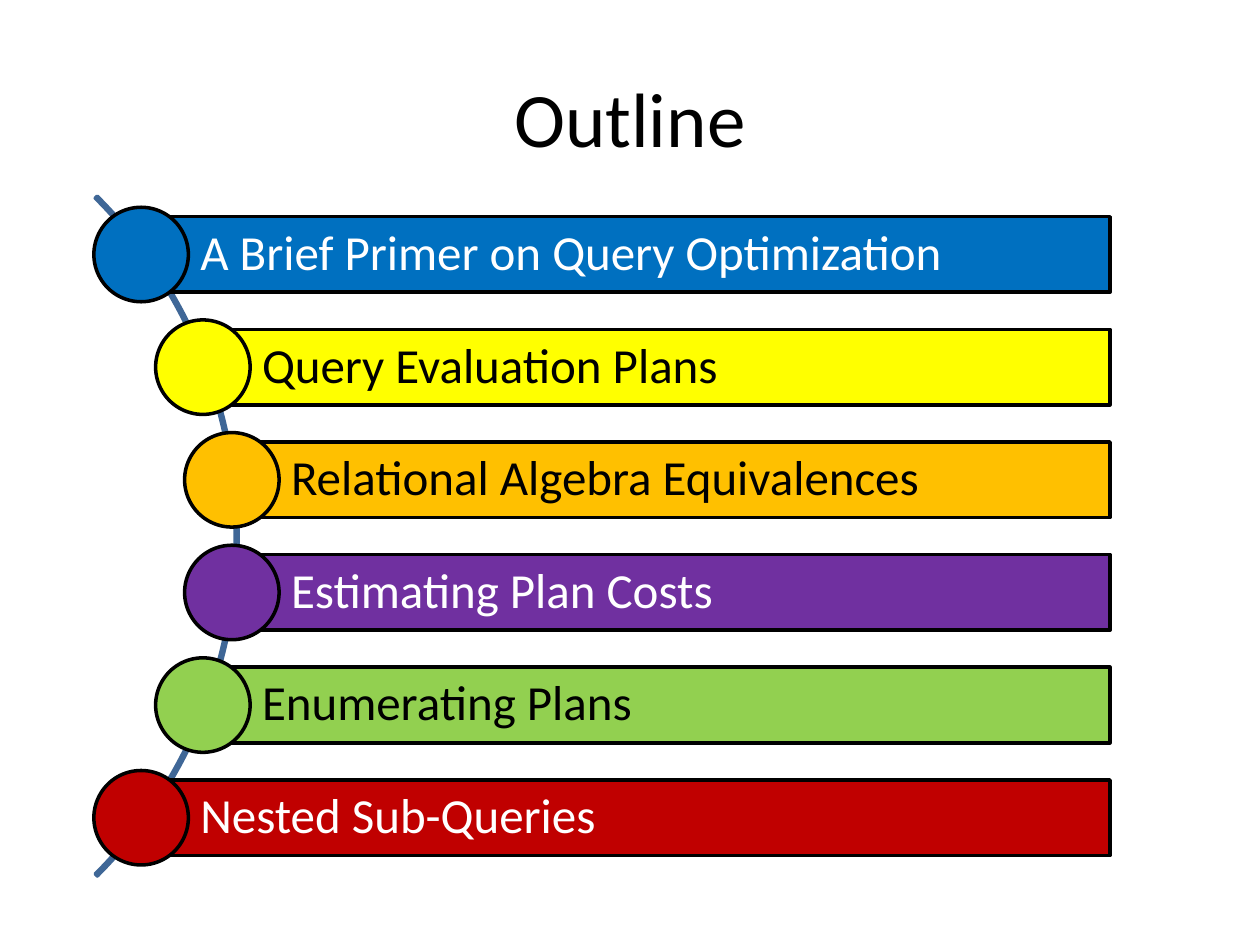
from dataclasses import dataclass

from pptx import Presentation
from pptx.dml.color import RGBColor
from pptx.enum.shapes import MSO_SHAPE
from pptx.enum.text import MSO_ANCHOR, PP_ALIGN
from pptx.util import Inches, Pt

FONT = "Calibri"
BLACK, WHITE = "000000", "FFFFFF"
FIRST_TOP, LAST_TOP = 1.72, 6.19
BAR_HEIGHT, BAR_RIGHT = 0.6, 8.81
DOT_SIZE = 0.75
ARC_SIZE, ARC_LEFT, ARC_TOP = 7.63, -5.74, 0.44


@dataclass(frozen=True)
class Topic:
    label: str
    fill: str
    text_color: str
    bar_left: float


TOPICS = [
    Topic("A Brief Primer on Query Optimization", "0070C0", WHITE, 1.12),
    Topic("Query Evaluation Plans", "FFFF00", BLACK, 1.61),
    Topic("Relational Algebra Equivalences", "FFC000", BLACK, 1.84),
    Topic("Estimating Plan Costs", "7030A0", WHITE, 1.84),
    Topic("Enumerating Plans", "92D050", BLACK, 1.61),
    Topic("Nested Sub-Queries", "C00000", WHITE, 1.12),
]


def rgb(value: str) -> RGBColor:
    return RGBColor.from_string(value)


def add_outlined(slide, kind, left: float, top: float, width: float, height: float,
                 line: str, fill: str | None = None):
    """Add a preset shape with a 2 pt outline; without a fill it stays hollow."""
    shape = slide.shapes.add_shape(
        kind, Inches(left), Inches(top), Inches(width), Inches(height))
    shape.shadow.inherit = False
    if fill is None:
        shape.fill.background()
    else:
        shape.fill.solid()
        shape.fill.fore_color.rgb = rgb(fill)
    shape.line.color.rgb = rgb(line)
    shape.line.width = Pt(2)
    return shape


def write(frame, text: str, size: int, color: str, align) -> None:
    frame.word_wrap = True
    frame.vertical_anchor = MSO_ANCHOR.MIDDLE
    paragraph = frame.paragraphs[0]
    paragraph.text = text
    paragraph.alignment = align
    paragraph.font.name = FONT
    paragraph.font.size = Pt(size)
    paragraph.font.color.rgb = rgb(color)


def add_title(slide, text: str) -> None:
    title = slide.shapes.add_textbox(Inches(0.5), Inches(0.3), Inches(9), Inches(1.25))
    write(title.text_frame, text, 44, BLACK, PP_ALIGN.CENTER)


def add_arc(slide) -> None:
    arc = add_outlined(slide, MSO_SHAPE.BLOCK_ARC, ARC_LEFT, ARC_TOP,
                       ARC_SIZE, ARC_SIZE, "3F6797")
    for index, value in enumerate((189, 27, 0.003)):
        arc.adjustments[index] = value


def add_topic(slide, topic: Topic, top: float) -> None:
    """Draw a labelled bar with a dot centred on its left edge."""
    bar = add_outlined(slide, MSO_SHAPE.RECTANGLE, topic.bar_left, top,
                       BAR_RIGHT - topic.bar_left, BAR_HEIGHT, BLACK, topic.fill)
    frame = bar.text_frame
    frame.margin_left = Inches(0.47)
    frame.margin_top = frame.margin_right = frame.margin_bottom = Inches(0.08)
    write(frame, topic.label, 28, topic.text_color, PP_ALIGN.LEFT)
    frame.paragraphs[0].line_spacing = 0.9

    add_outlined(slide, MSO_SHAPE.OVAL, topic.bar_left - DOT_SIZE / 2,
                 top + (BAR_HEIGHT - DOT_SIZE) / 2, DOT_SIZE, DOT_SIZE,
                 BLACK, topic.fill)


def main() -> None:
    deck = Presentation()
    deck.slide_width, deck.slide_height = Inches(10), Inches(7.5)
    slide = deck.slides.add_slide(deck.slide_layouts[6])

    add_title(slide, "Outline")
    add_arc(slide)
    pitch = (LAST_TOP - FIRST_TOP) / (len(TOPICS) - 1)
    for row, topic in enumerate(TOPICS):
        add_topic(slide, topic, FIRST_TOP + row * pitch)

    deck.save("out.pptx")


if __name__ == "__main__":
    main()
